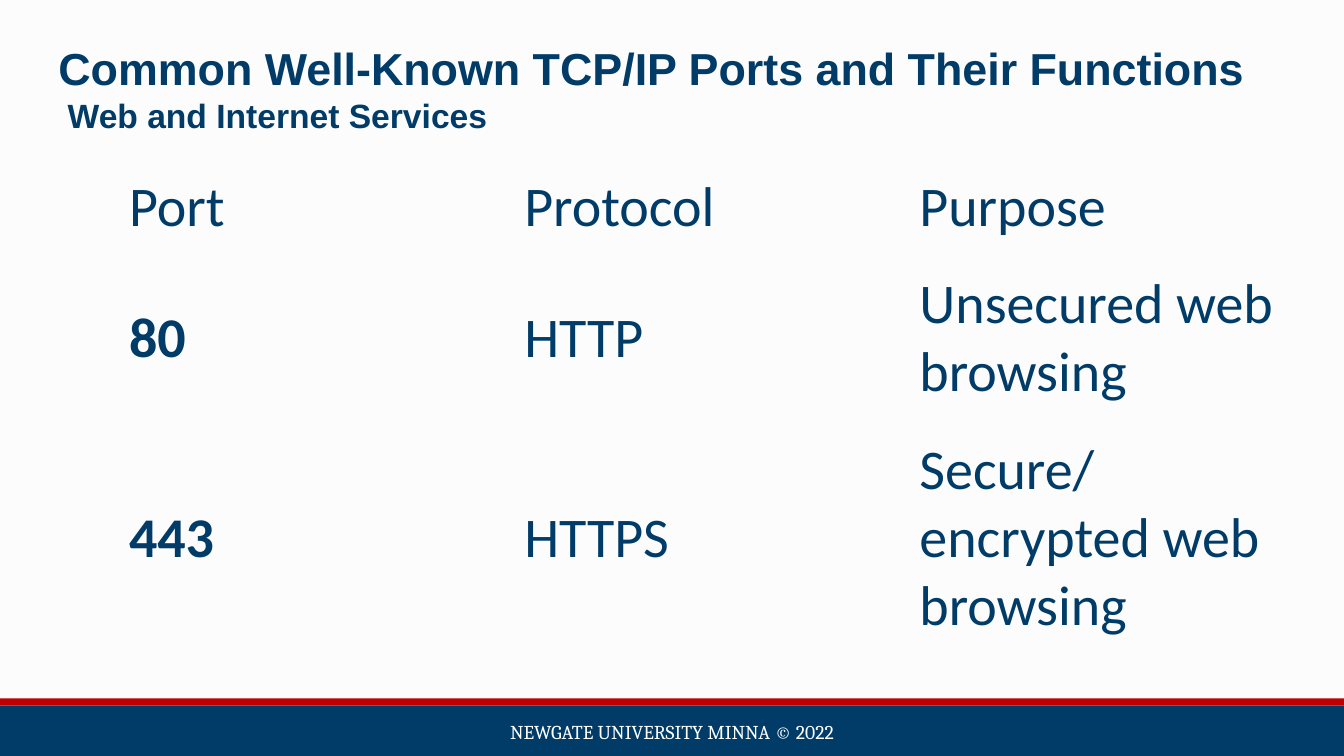
from pptx import Presentation
from pptx.dml.color import RGBColor
from pptx.enum.shapes import MSO_SHAPE
from pptx.enum.text import MSO_ANCHOR, PP_ALIGN
from pptx.util import Pt

RECTANGLE = MSO_SHAPE.RECTANGLE
MIDDLE = MSO_ANCHOR.MIDDLE
LEFT, CENTER = PP_ALIGN.LEFT, PP_ALIGN.CENTER

PX = 9144  # EMU per px, 100 px to the inch
NO_GRID_STYLE = "{2D5ABB26-0587-4C30-8999-92F81FD0307C}"

THEME = {
    "paper": RGBColor(0xFC, 0xFC, 0xFC),
    "navy": RGBColor(0x01, 0x3C, 0x68),
    "red": RGBColor(0xC0, 0x00, 0x00),
    "white": RGBColor(0xFF, 0xFF, 0xFF),
    "heading": ("Arial", 32),
    "subheading": ("Arial", 24),
    "body": ("Calibri", 40),
    "footer": ("Cambria", 14),
}


def write(paragraph, text, style, color="navy", bold=False, align=LEFT):
    paragraph.text = text
    paragraph.alignment = align
    family, size = THEME[style]
    paragraph.font.name = family
    paragraph.font.size = Pt(size)
    paragraph.font.bold = bold
    paragraph.font.color.rgb = THEME[color]


def add_text_frame(left, top, width, height):
    box = slide.shapes.add_textbox(left * PX, top * PX, width * PX, height * PX)
    box.text_frame.word_wrap = True
    box.text_frame.vertical_anchor = MIDDLE
    return box.text_frame


prs = Presentation()
prs.slide_width, prs.slide_height = 1333 * PX, 750 * PX
slide = prs.slides.add_slide(prs.slide_layouts[6])
slide.background.fill.solid()
slide.background.fill.fore_color.rgb = THEME["paper"]

# Footer bands
for top, height, color in ((700, 50, "navy"), (693, 7, "red")):
    band = slide.shapes.add_shape(RECTANGLE, 0, top * PX, prs.slide_width, height * PX)
    band.shadow.inherit = False
    band.fill.solid()
    band.fill.fore_color.rgb = THEME[color]
    band.line.fill.background()

footer = add_text_frame(403, 706, 527, 40)
write(footer.paragraphs[0], "NEWGATE UNIVERSITY MINNA ©️ 2022", "footer", "white", align=CENTER)

# Ports table
PORTS = (
    ("Port", "Protocol", "Purpose"),
    ("80", "HTTP", "Unsecured web browsing"),
    ("443", "HTTPS", "Secure/encrypted web browsing"),
)
ROW_HEIGHTS = (99, 161, 236)
COLUMN_WIDTH = 392

ports_frame = slide.shapes.add_table(
    len(PORTS), 3, 118 * PX, 156 * PX, 3 * COLUMN_WIDTH * PX, sum(ROW_HEIGHTS) * PX
)
ports = ports_frame.table
ports.first_row = ports.horz_banding = False
ports_frame._element.graphic.graphicData.tbl.tblPr.find("{*}tableStyleId").text = NO_GRID_STYLE

for column in ports.columns:
    column.width = COLUMN_WIDTH * PX
for r, (entries, height) in enumerate(zip(PORTS, ROW_HEIGHTS)):
    ports.rows[r].height = height * PX
    for c, entry in enumerate(entries):
        cell = ports.cell(r, c)
        cell.fill.background()
        cell.vertical_anchor = MIDDLE
        write(cell.text_frame.paragraphs[0], entry, "body", bold=r > 0 and c == 0)

# Title and subtitle
title = add_text_frame(48, 35, 1208, 104)
write(title.paragraphs[0], "Common Well-Known TCP/IP Ports and Their Functions", "heading", bold=True)
write(title.add_paragraph(), " Web and Internet Services", "subheading", bold=True)

prs.save("out.pptx")
